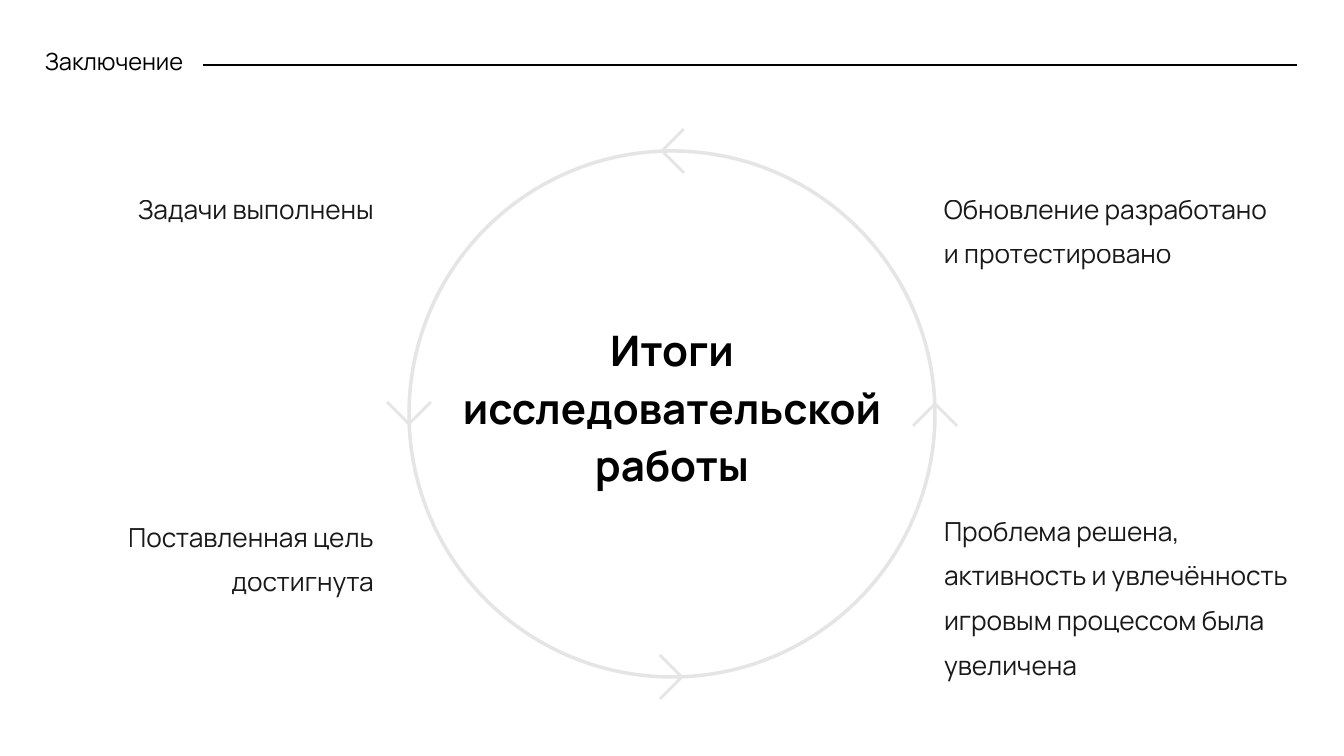
from lxml import etree
from pptx import Presentation
from pptx import util as u
from pptx.dml.color import RGBColor
from pptx.enum import shapes, text
from pptx.oxml.ns import qn

PX = 914400 / 126
FONT = "Manrope"
BLACK = RGBColor(0x00, 0x00, 0x00)
GREY = RGBColor(0xE5, 0xE5, 0xE5)

CENTER_X, CENTER_Y, RADIUS = 672, 414, 263
TIP_SHIFT = 12
CHEVRON = [(0, 0), (-23, -23), (-21, -25), (0, -4), (21, -25), (23, -23)]

RESULTS = [
    ("Задачи выполнены", (45, 178, 329, 89), text.PP_ALIGN.RIGHT),
    ("Поставленная цель достигнута", (45, 506, 329, 89), text.PP_ALIGN.RIGHT),
    ("Обновление разработано и протестировано", (944, 178, 329, 89), text.PP_ALIGN.LEFT),
    ("Проблема решена, активность и увлечённость игровым процессом была увеличена",
     (944, 500, 344, 191), text.PP_ALIGN.LEFT),
]


def px(value):
    return u.Emu(round(value * PX))


def place(shape, box):
    shape.left, shape.top, shape.width, shape.height = map(px, box)


def write(shape, words, size, spacing, align=text.PP_ALIGN.LEFT, bold=False,
          inset=2, opacity=100):
    frame = shape.text_frame
    frame.word_wrap = True
    frame.auto_size = text.MSO_AUTO_SIZE.NONE
    frame.vertical_anchor = text.MSO_ANCHOR.TOP
    frame.margin_left = frame.margin_right = frame.margin_bottom = 0
    frame.margin_top = px(inset)
    paragraph = frame.paragraphs[0]
    paragraph.alignment = align
    paragraph.line_spacing = u.Pt(spacing)
    paragraph.space_before = u.Pt(0)
    run = paragraph.add_run()
    run.text = words
    font = run.font
    font.name, font.size, font.bold = FONT, u.Pt(size), bold
    font.color.rgb = BLACK
    if opacity < 100:
        color = run._r.rPr.find(".//" + qn("a:srgbClr"))
        etree.SubElement(color, qn("a:alpha"), val=str(opacity * 1000))


def add_text(slide, words, box, **style):
    shape = slide.shapes.add_textbox(*map(px, box))
    write(shape, words, **style)


def add_heading(slide, words):
    title = slide.shapes.title
    place(title, (45, 45, 527, 29))
    write(title, words, size=13.5, spacing=16.2)
    rule = slide.shapes.add_connector(
        shapes.MSO_CONNECTOR.STRAIGHT, px(203), px(65), px(1297), px(65))
    rule.line.color.rgb = BLACK
    rule.line.width = u.Pt(0.75)
    etree.SubElement(rule._element.spPr, qn("a:effectLst"))


def add_ring(slide):
    ring = slide.shapes.add_shape(
        shapes.MSO_SHAPE.OVAL, px(CENTER_X - RADIUS), px(CENTER_Y - RADIUS),
        px(2 * RADIUS), px(2 * RADIUS))
    ring.shadow.inherit = False
    ring.fill.background()
    ring.line.color.rgb = GREY
    ring.line.width = u.Pt(2)


def add_arrowheads(slide):
    """Four chevrons round the ring, each a quarter turn from the one before."""
    points = [(x - RADIUS, y + TIP_SHIFT) for x, y in CHEVRON]
    for _ in range(4):
        first, *others = [(CENTER_X + x, CENTER_Y + y) for x, y in points]
        builder = slide.shapes.build_freeform(*first, scale=PX)
        builder.add_line_segments(others, close=True)
        chevron = builder.convert_to_shape()
        chevron.shadow.inherit = False
        chevron.fill.solid()
        chevron.fill.fore_color.rgb = GREY
        chevron.line.fill.background()
        points = [(y, -x) for x, y in points]


def main():
    presentation = Presentation()
    presentation.slide_width, presentation.slide_height = px(1344), px(756)
    slide = presentation.slides.add_slide(presentation.slide_layouts[5])
    add_heading(slide, "Заключение")
    add_ring(slide)
    for words, box, align in RESULTS:
        add_text(slide, words, box, size=15, spacing=25.5, align=align, opacity=90)
    add_arrowheads(slide)
    add_text(slide, "Итоги исследовательской работы", (449, 311, 446, 188),
             size=24, spacing=33, align=text.PP_ALIGN.CENTER, bold=True, inset=6)
    presentation.save("out.pptx")


if __name__ == "__main__":
    main()
